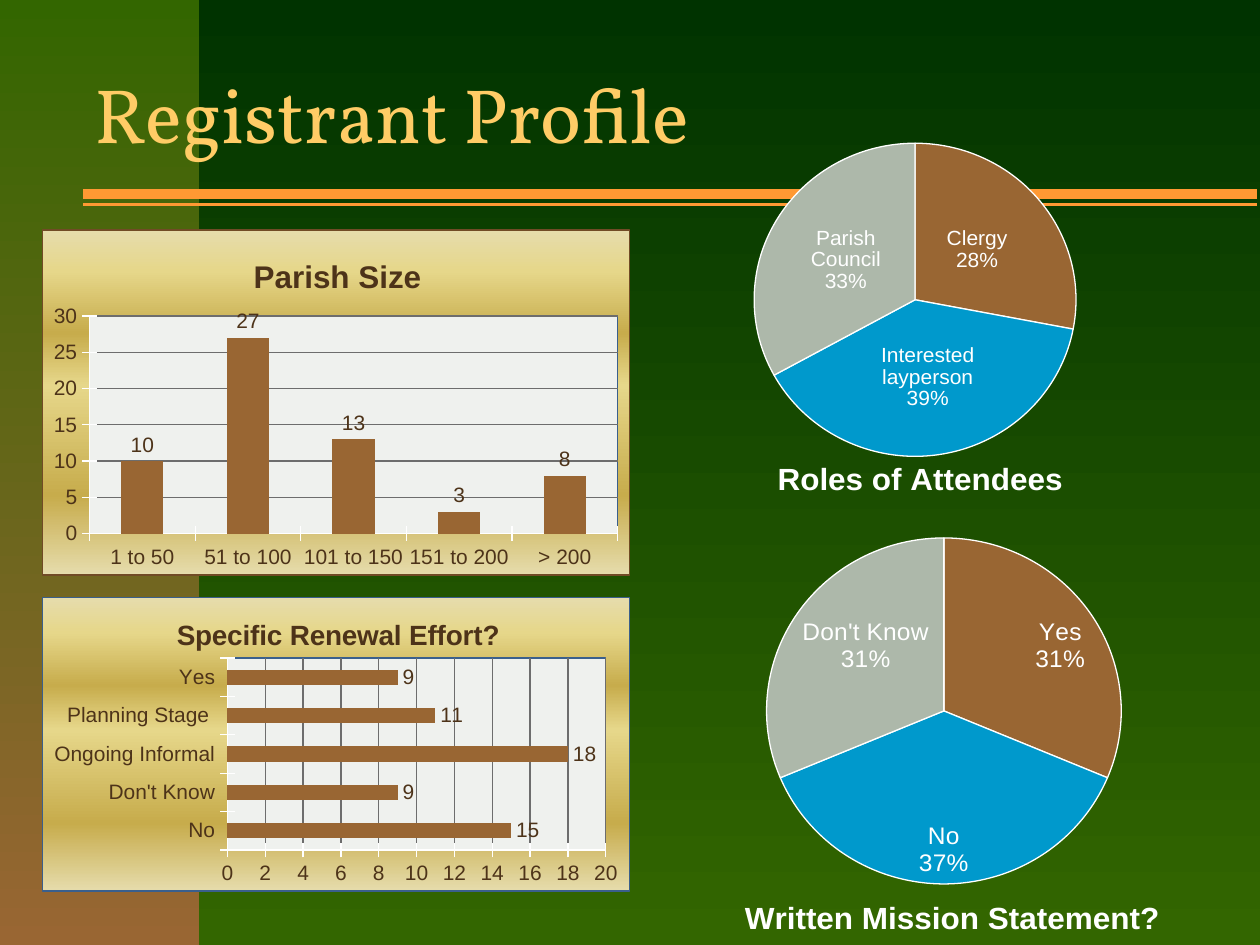
from dataclasses import dataclass

from lxml.etree import SubElement
from pptx import Presentation
from pptx.chart.chart import Chart
from pptx.chart.data import CategoryChartData
from pptx.dml.color import RGBColor
from pptx.dml.fill import FillFormat
from pptx.enum.chart import XL_CHART_TYPE, XL_LABEL_POSITION, XL_TICK_MARK
from pptx.enum.shapes import MSO_CONNECTOR, MSO_SHAPE
from pptx.enum.text import MSO_ANCHOR
from pptx.oxml import parse_xml
from pptx.oxml.ns import nsdecls, qn
from pptx.slide import Slide
from pptx.util import Pt

DARK_GREEN = RGBColor(0x00, 0x33, 0x00)
GREEN = RGBColor(0x33, 0x66, 0x00)
BROWN = RGBColor(0x99, 0x66, 0x33)
BLUE = RGBColor(0x00, 0x99, 0xCC)
GREY = RGBColor(0xAD, 0xB8, 0xAA)
ORANGE = RGBColor(0xFF, 0x99, 0x33)
GOLD = RGBColor(0xFF, 0xCC, 0x66)
WHITE = RGBColor(0xFF, 0xFF, 0xFF)
INK = RGBColor(0x4D, 0x33, 0x19)
GRID = RGBColor(0x6D, 0x6D, 0x6D)
PANEL = RGBColor(0xEF, 0xF1, 0xEE)
PANEL_EDGE = RGBColor(0x3A, 0x5F, 0x8C)
BROWN_EDGE = RGBColor(0x71, 0x4B, 0x26)
SAND = RGBColor(0xE6, 0xDC, 0xAC)
STRAW = RGBColor(0xE6, 0xD7, 0x8A)
BRASS = RGBColor(0xC7, 0xAC, 0x4C)
BRASS_STOPS = ((0, SAND), (12, STRAW), (30, BRASS), (45, STRAW), (77, BRASS), (100, SAND))


@dataclass(frozen=True)
class Survey:
    title: str
    title_size: float
    title_at: tuple[float, float]
    box: tuple[float, float, float, float]
    plot: tuple[float, float, float, float]
    answers: dict[str, int]


@dataclass(frozen=True)
class PieSurvey(Survey):
    label_size: float
    label_position: XL_LABEL_POSITION


@dataclass(frozen=True)
class BarSurvey(Survey):
    direction: XL_CHART_TYPE
    maximum: int
    step: int
    edge: RGBColor


PIES = (
    PieSurvey("Roles of Attendees", 18, (0.17, 0.88), (384, 79, 336, 210),
              (0.107, 0.014, 0.613, 0.876),
              {"Clergy": 28, "Interested layperson": 39, "Parish Council": 33},
              12, XL_LABEL_POSITION.CENTER),
    PieSurvey("Written Mission Statement?", 18, (0.2, 0.91), (348, 270, 372, 270),
              (0.242, 0.112, 0.545, 0.811),
              {"Yes": 31, "No": 37, "Don't Know": 31},
              14, XL_LABEL_POSITION.INSIDE_END),
)
BARS = (
    BarSurvey("Parish Size", 18, (0.35, 0.06), (24, 131, 336, 198),
              (0.08, 0.25, 0.9, 0.63),
              {"1 to 50": 10, "51 to 100": 27, "101 to 150": 13, "151 to 200": 3, "> 200": 8},
              XL_CHART_TYPE.COLUMN_CLUSTERED, 30, 5, BROWN_EDGE),
    BarSurvey("Specific Renewal Effort?", 16, (0.22, 0.05), (24, 341, 336, 168.5),
              (0.315, 0.207, 0.645, 0.654),
              {"No": 15, "Don't Know": 9, "Ongoing Informal": 18, "Planning Stage ": 11, "Yes": 9},
              XL_CHART_TYPE.BAR_CLUSTERED, 20, 2, PANEL_EDGE),
)


def fade_down(fill: FillFormat, top: RGBColor, bottom: RGBColor) -> None:
    fill.gradient()
    fill.gradient_angle = 270
    for stop, color, position in zip(fill.gradient_stops, (top, bottom), (0, 1)):
        stop.color.rgb = color
        stop.position = position


def add_rule(slide: Slide, y: float, width: float) -> None:
    rule = slide.shapes.add_connector(MSO_CONNECTOR.STRAIGHT, Pt(47.5), Pt(y), Pt(718.5), Pt(y))
    rule.line.color.rgb = ORANGE
    rule.line.width = Pt(width)
    SubElement(rule._element.spPr, qn("a:effectLst"))


def add_heading(slide: Slide, text: str) -> None:
    frame = slide.shapes.add_textbox(Pt(47), Pt(21), Pt(613.5), Pt(87)).text_frame
    frame.word_wrap = True
    frame.vertical_anchor = MSO_ANCHOR.MIDDLE
    run = frame.paragraphs[0].add_run()
    run.text = text
    run.font.size = Pt(44)
    run.font.name = "Vollkorn"
    run.font.color.rgb = GOLD
    run._r.rPr.find(qn("a:solidFill")).addnext(parse_xml(
        f'<a:effectLst {nsdecls("a")}><a:outerShdw dist="38100" dir="2700000">'
        '<a:srgbClr val="000000"/></a:outerShdw></a:effectLst>'))


def layout_xml(target: str, **fractions: float):
    values = "".join(f'<c:{key} val="{value}"/>' for key, value in fractions.items())
    return parse_xml(f'<c:layout {nsdecls("c")}><c:manualLayout>{target}'
                     '<c:xMode val="edge"/><c:yMode val="edge"/>'
                     f'{values}</c:manualLayout></c:layout>')


def area_xml(fill: str, edge: RGBColor):
    return parse_xml(f'<c:spPr {nsdecls("c", "a")}>{fill}<a:ln w="9525"><a:solidFill>'
                     f'<a:srgbClr val="{edge}"/></a:solidFill></a:ln></c:spPr>')


def add_survey(slide: Slide, survey: Survey, kind: XL_CHART_TYPE, ink: RGBColor) -> Chart:
    data = CategoryChartData()
    data.categories = list(survey.answers)
    data.add_series(survey.title, list(survey.answers.values()))
    chart = slide.shapes.add_chart(kind, *map(Pt, survey.box), data).chart
    chart.font.name = "Arial"
    chart.font.size = Pt(18)
    chart.font.color.rgb = WHITE
    chart.has_legend = False
    chart.has_title = True
    run = chart.chart_title.text_frame.paragraphs[0].add_run()
    run.text = survey.title
    run.font.name = "Arial"
    run.font.size = Pt(survey.title_size)
    run.font.bold = True
    run.font.color.rgb = ink

    title = chart._chartSpace.chart.find(qn("c:title"))
    plot_area = chart._chartSpace.chart.plotArea
    for parent in (title, plot_area):
        for layout in parent.findall(qn("c:layout")):
            parent.remove(layout)
    title.find(qn("c:tx")).addnext(layout_xml("", **dict(zip("xy", survey.title_at))))
    plot_area.insert(0, layout_xml('<c:layoutTarget val="inner"/>', **dict(zip("xywh", survey.plot))))
    return chart


def style_labels(chart: Chart, size: float, ink: RGBColor, position: XL_LABEL_POSITION):
    chart.plots[0].has_data_labels = True
    labels = chart.plots[0].data_labels
    labels.font.name = "Arial"
    labels.font.size = Pt(size)
    labels.font.color.rgb = ink
    labels.position = position
    return labels


def add_pie(slide: Slide, survey: PieSurvey) -> None:
    chart = add_survey(slide, survey, XL_CHART_TYPE.PIE, WHITE)
    labels = style_labels(chart, survey.label_size, WHITE, survey.label_position)
    labels.show_value = False
    labels.show_category_name = True
    labels.show_percentage = True
    labels.number_format = "0%"
    labels.number_format_is_linked = False
    separator = SubElement(labels._element, qn("c:separator"))
    separator.text = "\n"
    labels._element.find(qn("c:showBubbleSize")).addnext(separator)
    for index, color in enumerate((BROWN, BLUE, GREY)):
        slice_format = chart.plots[0].series[0].points[index].format
        slice_format.fill.solid()
        slice_format.fill.fore_color.rgb = color
        slice_format.line.color.rgb = WHITE
        slice_format.line.width = Pt(0.75)


def add_bars(slide: Slide, survey: BarSurvey) -> None:
    chart = add_survey(slide, survey, survey.direction, INK)
    style_labels(chart, 12, INK, XL_LABEL_POSITION.OUTSIDE_END).show_value = True
    plot = chart.plots[0]
    plot.vary_by_categories = False
    plot.gap_width = 150
    plot.series[0].format.fill.solid()
    plot.series[0].format.fill.fore_color.rgb = BROWN
    for axis in (chart.category_axis, chart.value_axis):
        axis.major_tick_mark = XL_TICK_MARK.CROSS
        axis.minor_tick_mark = XL_TICK_MARK.NONE
        axis.tick_labels.font.name = "Arial"
        axis.tick_labels.font.size = Pt(12)
        axis.tick_labels.font.color.rgb = INK
        axis.format.line.color.rgb = WHITE
    values = chart.value_axis
    values.minimum_scale = 0
    values.maximum_scale = survey.maximum
    values.major_unit = survey.step
    values.has_major_gridlines = True
    values.major_gridlines.format.line.color.rgb = GRID
    values.major_gridlines.format.line.width = Pt(0.75)

    stops = "".join(f'<a:gs pos="{position * 1000}"><a:srgbClr val="{color}"/></a:gs>'
                    for position, color in BRASS_STOPS)
    brass = f'<a:gradFill><a:gsLst>{stops}</a:gsLst><a:lin ang="5400000" scaled="0"/></a:gradFill>'
    panel = f'<a:solidFill><a:srgbClr val="{PANEL}"/></a:solidFill>'
    chart._chartSpace.chart.addnext(area_xml(brass, survey.edge))
    chart._chartSpace.chart.plotArea.append(area_xml(panel, PANEL_EDGE))


def main() -> None:
    deck = Presentation()
    deck.slide_width, deck.slide_height = Pt(720), Pt(540)
    slide = deck.slides.add_slide(deck.slide_layouts[6])
    fade_down(slide.background.fill, DARK_GREEN, GREEN)
    side_band = slide.shapes.add_shape(MSO_SHAPE.RECTANGLE, 0, 0, Pt(113.75), Pt(540))
    side_band.shadow.inherit = False
    side_band.line.fill.background()
    fade_down(side_band.fill, GREEN, BROWN)
    add_rule(slide, 116.75, 2)
    add_rule(slide, 110.75, 6)
    add_heading(slide, "Registrant Profile")
    for survey in PIES:
        add_pie(slide, survey)
    for survey in BARS:
        add_bars(slide, survey)
    deck.save("out.pptx")


if __name__ == "__main__":
    main()
